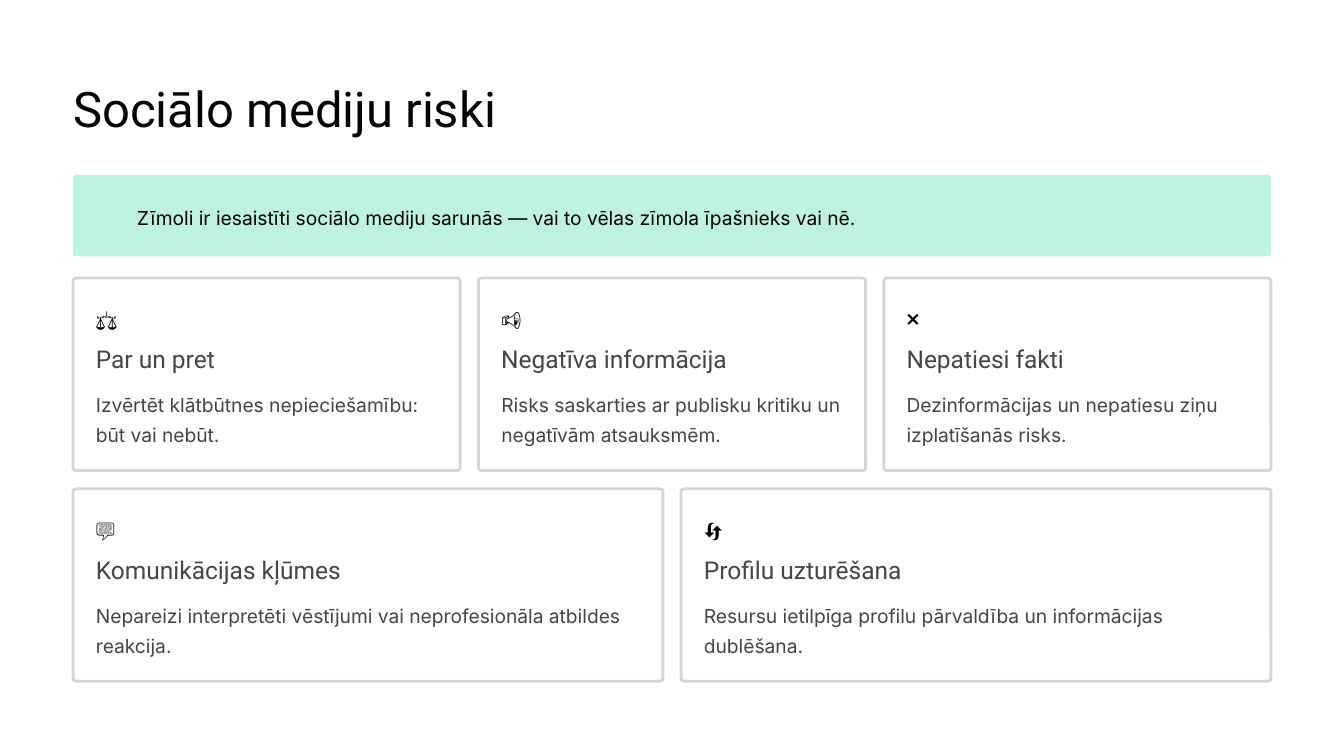
from pptx import Presentation
from pptx.dml.color import RGBColor
from pptx.enum.shapes import MSO_SHAPE
from pptx.util import Cm, Pt

ROUNDED = MSO_SHAPE.ROUNDED_RECTANGLE

# Content
TITLE = "Sociālo mediju riski"
BANNER = "Zīmoli ir iesaistīti sociālo mediju sarunās — vai to vēlas zīmola īpašnieks vai nē."
CARD_ROWS = [
    [
        ("⚖️", "Par un pret", "Izvērtēt klātbūtnes nepieciešamību: būt vai nebūt."),
        ("📢", "Negatīva informācija",
         "Risks saskarties ar publisku kritiku un negatīvām atsauksmēm."),
        ("❌", "Nepatiesi fakti", "Dezinformācijas un nepatiesu ziņu izplatīšanās risks."),
    ],
    [
        ("💬", "Komunikācijas kļūmes",
         "Nepareizi interpretēti vēstījumi vai neprofesionāla atbildes reakcija."),
        ("🔄", "Profilu uzturēšana",
         "Resursu ietilpīga profilu pārvaldība un informācijas dublēšana."),
    ],
]

# Look: font, size, line spacing, colour
TITLE_STYLE = ("Roboto", 42, 53, "030303")
HEADING_STYLE = ("Roboto", 21, 26.5, "464646")
BODY_STYLE = ("Inter", 16.5, 26, "464646")
DARK_STYLE = ("Inter", 16.5, 26, "000000")
WHITE, MINT, BORDER = "FFFFFF", "BEF3E2", "D8D4D4"

# Layout in centimetres
LEFT, WIDTH = 2.21, 36.22
CARDS_TOP, CARD_HEIGHT, GAP, PADDING = 8.41, 5.82, 0.55, 0.69
HEADING_WIDTH = 7.6


def colour(hex_text):
    return RGBColor.from_string(hex_text)


def add_panel(page, left, top, width, height, fill, rounding, border=None):
    panel = page.shapes.add_shape(ROUNDED, Cm(left), Cm(top), Cm(width), Cm(height))
    panel.adjustments[0] = rounding
    panel.shadow.inherit = False
    panel.fill.solid()
    panel.fill.fore_color.rgb = colour(fill)
    if border:
        panel.line.color.rgb = colour(border)
        panel.line.width = Pt(2.4)
    else:
        panel.line.fill.background()


def add_text(page, left, top, width, height, text, style):
    font_name, size, spacing, hex_text = style
    box = page.shapes.add_textbox(Cm(left), Cm(top), Cm(width), Cm(height))
    frame = box.text_frame
    frame.word_wrap = True
    frame.margin_left = frame.margin_right = 0
    frame.margin_top = frame.margin_bottom = 0
    para = frame.paragraphs[0]
    para.text = text
    para.line_spacing = Pt(spacing)
    para.font.name = font_name
    para.font.size = Pt(size)
    para.font.color.rgb = colour(hex_text)


def add_card(page, left, top, width, card):
    icon, heading, body = card
    inner_left, inner_width = left + PADDING, width - 2 * PADDING
    add_panel(page, left, top, width, CARD_HEIGHT, WHITE, 0.015, BORDER)
    add_text(page, inner_left, top + 0.67, inner_width, 0.95, icon, DARK_STYLE)
    add_text(page, inner_left, top + 1.96, HEADING_WIDTH, 0.94, heading, HEADING_STYLE)
    add_text(page, inner_left, top + 3.26, inner_width, 1.88, body, BODY_STYLE)


def main():
    deck = Presentation()
    deck.slide_width, deck.slide_height = Cm(40.64), Cm(22.86)
    page = deck.slides.add_slide(deck.slide_layouts[6])
    page.background.fill.solid()
    page.background.fill.fore_color.rgb = colour(WHITE)

    # Title and banner
    add_text(page, LEFT, 2.29, 14.96, 1.88, TITLE, TITLE_STYLE)
    add_panel(page, LEFT, 5.29, WIDTH, 2.46, MINT, 0.036)
    add_text(page, 4.14, 6.02, 33.68, 0.94, BANNER, DARK_STYLE)

    # Each row of cards shares the full width
    for row, cards in enumerate(CARD_ROWS):
        top = CARDS_TOP + row * (CARD_HEIGHT + GAP)
        width = (WIDTH - GAP * (len(cards) - 1)) / len(cards)
        for column, card in enumerate(cards):
            add_card(page, LEFT + column * (width + GAP), top, width, card)

    deck.save("out.pptx")


if __name__ == "__main__":
    main()
